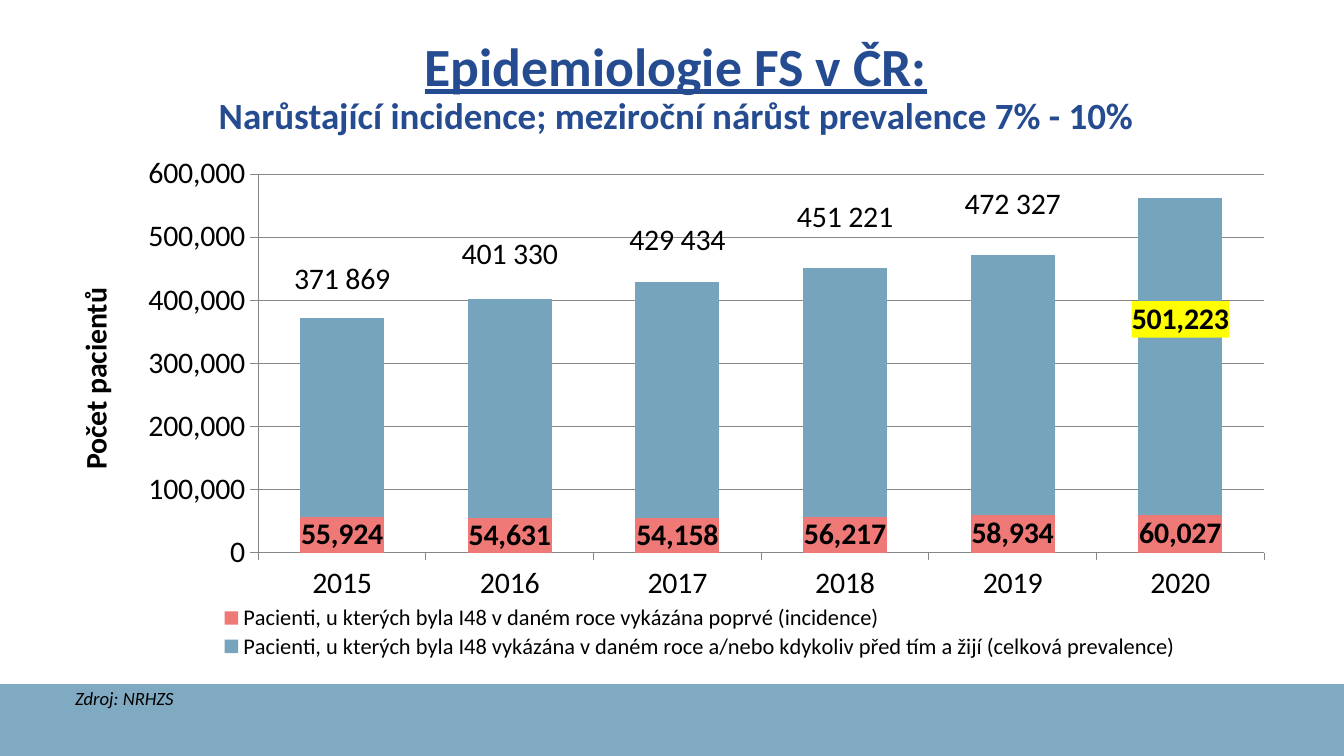
from dataclasses import dataclass

from lxml.etree import SubElement
from pptx import Presentation
from pptx.chart.chart import Chart
from pptx.chart.data import CategoryChartData
from pptx.chart.series import BarSeries
from pptx.dml.color import RGBColor
from pptx.enum.chart import XL_CHART_TYPE, XL_LABEL_POSITION, XL_LEGEND_POSITION, XL_TICK_MARK
from pptx.enum.shapes import MSO_SHAPE
from pptx.enum.text import MSO_ANCHOR, PP_ALIGN
from pptx.oxml import parse_xml
from pptx.oxml.ns import nsdecls, qn
from pptx.slide import Slide
from pptx.text.text import Font
from pptx.util import Inches, Pt

FONT = "Calibri"
BLUE = "76A4BD"
RED = "EE7976"
NAVY = "254B90"
BLACK = "000000"
GRAY = "868686"
YELLOW = "FFFF00"
SLIDE_WIDTH = 10
SLIDE_HEIGHT = SLIDE_WIDTH * 9 / 16
BAND_TOP = 5.09


@dataclass
class Box:
    left: float
    top: float
    width: float
    height: float

    def lengths(self) -> list[Inches]:
        return [Inches(value) for value in (self.left, self.top, self.width, self.height)]


@dataclass
class Style:
    size: float
    color: str = BLACK
    bold: bool = False
    italic: bool = False
    underline: bool = False


@dataclass
class Year:
    name: str
    incidence: int
    prevalence: int
    label: str
    label_shift: float


YEARS = [
    Year("2015", 55924, 315945, "371 869", -0.26),
    Year("2016", 54631, 346699, "401 330", -0.29),
    Year("2017", 54158, 375276, "429 434", -0.3),
    Year("2018", 56217, 395004, "451 221", -0.33),
    Year("2019", 58934, 413393, "472 327", -0.34),
    Year("2020", 60027, 501223, "", -0.07),
]


def color(value: str) -> RGBColor:
    return RGBColor.from_string(value)


def apply_style(font: Font, style: Style) -> None:
    font.name = FONT
    font.size = Pt(style.size)
    font.color.rgb = color(style.color)
    font.bold = style.bold
    font.italic = style.italic
    font.underline = style.underline


def add_band(slide: Slide, box: Box) -> None:
    band = slide.shapes.add_shape(MSO_SHAPE.RECTANGLE, *box.lengths())
    band.shadow.inherit = False
    band.line.fill.background()
    band.fill.solid()
    band.fill.fore_color.rgb = color(BLUE)
    fill_color = band.fill._xPr.find(qn("a:solidFill"))[0]
    SubElement(fill_color, qn("a:alpha")).set("val", "73000")


def add_text(slide: Slide, box: Box, text: str, styles: list[Style],
             alignment: PP_ALIGN, anchor: MSO_ANCHOR) -> None:
    text_frame = slide.shapes.add_textbox(*box.lengths()).text_frame
    text_frame.word_wrap = True
    text_frame.vertical_anchor = anchor
    text_frame.margin_left = text_frame.margin_right = Inches(0.06)
    text_frame.margin_top = text_frame.margin_bottom = Inches(0.03)
    paragraph = text_frame.paragraphs[0]
    paragraph.text = text
    paragraph.alignment = alignment
    paragraph.line_spacing = 0.9
    for run, style in zip(paragraph.runs, styles):
        apply_style(run.font, style)


def set_layout(parent, index: int, **values: float | str) -> None:
    for layout in parent.findall(qn("c:layout")):
        parent.remove(layout)
    items = "".join(f'<c:{name} val="{value}"/>' for name, value in values.items())
    parent.insert(index, parse_xml(
        f'<c:layout {nsdecls("c")}><c:manualLayout>{items}</c:manualLayout></c:layout>'))


def highlight_label(element) -> None:
    for properties in element.findall(qn("c:spPr")):
        element.remove(properties)
    element.find(qn("c:txPr")).addprevious(parse_xml(
        f'<c:spPr {nsdecls("c", "a")}><a:solidFill>'
        f'<a:srgbClr val="{YELLOW}"/></a:solidFill></c:spPr>'))


def format_series(series: BarSeries, fill: str) -> None:
    series.format.fill.solid()
    series.format.fill.fore_color.rgb = color(fill)
    labels = series.data_labels
    labels.show_value = True
    labels.position = XL_LABEL_POSITION.CENTER
    labels.number_format = "#,##0"
    labels.number_format_is_linked = False
    apply_style(labels.font, Style(16, bold=True))
    for leader_lines in labels._element.findall(qn("c:showLeaderLines")):
        leader_lines.set("val", "0")


def add_year_labels(series: BarSeries) -> None:
    for index, year in enumerate(YEARS):
        label = series.points[index].data_label
        if year.label:
            paragraph = label.text_frame.paragraphs[0]
            paragraph.text = year.label
            apply_style(paragraph.runs[0].font, Style(16))
        else:
            apply_style(label.font, Style(16, bold=True))
        label.position = XL_LABEL_POSITION.CENTER
        element = series.data_labels._element.findall(qn("c:dLbl"))[index]
        set_layout(element, 1, x=0, y=year.label_shift)
        if not year.label:
            highlight_label(element)


def format_axes(chart: Chart) -> None:
    value_axis = chart.value_axis
    value_axis.minimum_scale = 0
    value_axis.maximum_scale = 600000
    value_axis.major_unit = 100000
    value_axis.has_major_gridlines = True
    value_axis.tick_labels.number_format = "#,##0"
    value_axis.tick_labels.number_format_is_linked = False
    paragraph = value_axis.axis_title.text_frame.paragraphs[0]
    paragraph.text = "Počet pacientů"
    apply_style(paragraph.runs[0].font, Style(16, bold=True))
    for axis in (chart.category_axis, value_axis):
        axis.major_tick_mark = XL_TICK_MARK.OUTSIDE
        apply_style(axis.tick_labels.font, Style(16))
    for part in (chart.category_axis, value_axis, value_axis.major_gridlines):
        part.format.line.color.rgb = color(GRAY)
        part.format.line.width = Pt(0.5)


def add_patient_chart(slide: Slide, box: Box) -> None:
    data = CategoryChartData(number_format="#,##0")
    data.categories = [year.name for year in YEARS]
    data.add_series("Pacienti, u kterých byla I48 v daném roce vykázána poprvé (incidence)",
                    [year.incidence for year in YEARS])
    data.add_series("Pacienti, u kterých byla I48 vykázána v daném roce a/nebo kdykoliv "
                    "před tím a žijí (celková prevalence)",
                    [year.prevalence for year in YEARS])
    chart = slide.shapes.add_chart(XL_CHART_TYPE.COLUMN_STACKED, *box.lengths(), data).chart
    apply_style(chart.font, Style(16))
    chart.has_title = False
    chart.has_legend = True
    chart.legend.position = XL_LEGEND_POSITION.BOTTOM
    chart.legend.include_in_layout = False
    apply_style(chart.legend.font, Style(12))
    set_layout(chart.legend._element, 1, xMode="edge", yMode="edge", x=0.12, y=0.86, w=0.8, h=0.11)
    plot = chart.plots[0]
    plot.gap_width = 100
    plot.overlap = 100
    plot.vary_by_categories = False
    for series, fill in zip(plot.series, (RED, BLUE)):
        format_series(series, fill)
    add_year_labels(plot.series[1])
    format_axes(chart)
    set_layout(chart._chartSpace.chart.plotArea, 0, layoutTarget="inner",
               xMode="edge", yMode="edge", x=0.157, y=0.052, w=0.826, h=0.713)


def main() -> None:
    presentation = Presentation()
    presentation.slide_width = Inches(SLIDE_WIDTH)
    presentation.slide_height = Inches(SLIDE_HEIGHT)
    slide = presentation.slides.add_slide(presentation.slide_layouts[6])
    for _ in range(2):
        add_band(slide, Box(0, BAND_TOP, SLIDE_WIDTH, SLIDE_HEIGHT - BAND_TOP))
    add_text(slide, Box(0.5, 0.41, 9.06, 0.5),
             "Epidemiologie FS v ČR:\vNarůstající incidence; meziroční nárůst prevalence 7% - 10%",
             [Style(28.8, NAVY, bold=True, underline=True), Style(19.8, NAVY, bold=True)],
             PP_ALIGN.CENTER, MSO_ANCHOR.MIDDLE)
    add_text(slide, Box(0.5, 5.1, 5, 0.41), "Zdroj: NRHZS", [Style(10, italic=True)],
             PP_ALIGN.LEFT, MSO_ANCHOR.TOP)
    add_patient_chart(slide, Box(0.5, 1.09, 9.06, 3.95))
    presentation.save("out.pptx")


if __name__ == "__main__":
    main()
